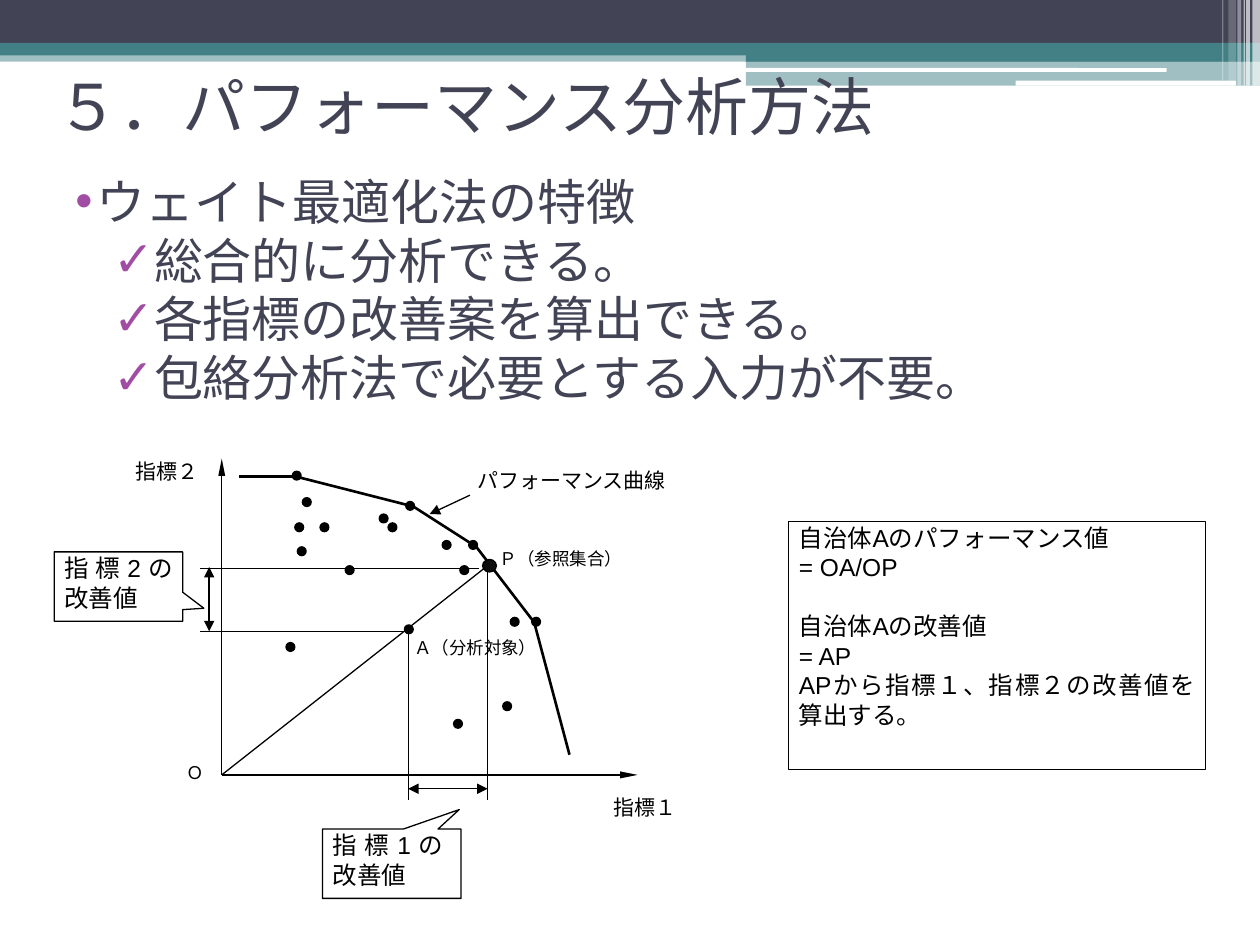
import pptx
import pptx.util
import pptx.dml.color
import pptx.oxml.ns
import pptx.enum.shapes
import pptx.enum.text
import lxml.etree

Inches, Pt = pptx.util.Inches, pptx.util.Pt
SHAPE = pptx.enum.shapes.MSO_SHAPE
ANCHOR = pptx.enum.text.MSO_ANCHOR
ALIGN = pptx.enum.text.PP_ALIGN
COLORS = {"navy": "424456", "teal": "438086", "purple": "A04DA3",
          "white": "FFFFFF", "black": "000000", "ink": "0D0D0D"}

# Content
TITLE = "５．パフォーマンス分析方法"
FEATURES = [("ウェイト最適化法の特徴", 0), ("総合的に分析できる。", 1),
            ("各指標の改善案を算出できる。", 1), ("包絡分析法で必要とする入力が不要。", 1)]
BULLETS = [("•", 0.17, 0.17), ("✓", 0.58, 0.28)]  # mark, text indent, hang
FORMULAS = ["自治体Aのパフォーマンス値", "= OA/OP", "自治体Aの改善値", "= AP",
            "APから指標１、指標２の改善値を算出する。"]
SECOND_FORMULA = 2
# Header bars: left, top, width, height, colour, opacity %
BARS = [(0, 0.4, 10, 0.09, "teal", 50), (0, 0, 10, 0.34, "navy", 100),
        (0, 0.34, 10, 0.1, "teal", 100), (5.92, 0.39, 4.08, 0.1, "teal", 100),
        (5.92, 0.48, 4.08, 0.2, "teal", 50)]
RULES = [(5.91, 0.54, 3.35, 0.03), (8.06, 0.64, 1.75, 0.04)]
STRIPES = [(9.94, 0.06, 0.68, 65), (9.89, 0.03, 0.68, 65), (9.87, 0.01, 0.68, 60),
           (9.82, 0.03, 0.68, 40), (9.75, 0.06, 0.64, 20), (9.7, 0.01, 0.64, 30)]
# Diagram
ORIGIN, REFERENCE = (1.76, 6.15), (3.87, 4.49)
AXIS_ENDS = [(1.76, 3.64), (5.06, 6.15)]
GUIDES = [((3.87, 4.51), (3.87, 6.35)), ((3.24, 4.98), (3.24, 6.35)),
          ((3.22, 5.01), (1.59, 5.01)), ((3.8, 4.51), (1.59, 4.51))]
IMPROVEMENTS = [((3.24, 6.26), (3.87, 6.26)), ((1.66, 4.5), (1.66, 5.01))]
CURVE = [(1.9, 3.78), (2.34, 3.78), (3.28, 4.02), (3.78, 4.34), (4.24, 4.94), (4.52, 5.99)]
DOT = 0.07
DOTS = [(3.22, 3.98), (2.74, 4.49), (2.34, 4.15), (3.65, 4.49), (3.08, 4.15), (3.6, 5.71),
        (3.99, 5.57), (3.72, 4.29), (2.36, 4.34), (4.22, 4.9), (3.01, 4.08), (3.51, 4.29),
        (2.4, 3.95), (2.54, 4.15), (4.05, 4.9), (2.27, 5.1), (3.21, 4.96), (2.32, 3.74)]
LABELS = [("指標２", 0.98, 3.59, 0.8, 0.34, 12, "Arial"),
          ("パフォーマンス曲線", 3.69, 3.66, 2.18, 0.43, 12, "Arial"),
          ("Ｏ", 1.38, 6, 0.49, 0.41, 10, "TeX Gyre Schola"),
          ("指標１", 4.77, 6.26, 0.81, 0.41, 12, "Arial"),
          ("Ａ（分析対象）", 3.19, 5.01, 1.26, 0.36, 10, "Arial"),
          ("Ｐ（参照集合）", 3.87, 4.3, 1.2, 0.39, 10, "Arial")]
CALLOUTS = [("指標2の改善値", 0.43, 4.38, 1.02, (0.665, 0.314)),
            ("指標1の\v改善値", 2.56, 6.58, 1.1, (0.487, -0.782))]

prs = pptx.Presentation()
prs.slide_width, prs.slide_height = Inches(10), Inches(7.5)
slide = prs.slides.add_slide(prs.slide_layouts[5])


def rgb(name):
    return pptx.dml.color.RGBColor.from_string(COLORS[name])


def sub(parent, tag, **attributes):
    return lxml.etree.SubElement(parent, pptx.oxml.ns.qn(tag), attributes)


def box(kind, left, top, width, height, fill, line=None, opacity=100):
    shape = slide.shapes.add_shape(kind, *map(Inches, (left, top, width, height)))
    shape.shadow.inherit = False
    shape.fill.solid()
    shape.fill.fore_color.rgb = rgb(fill)
    if opacity < 100:
        color = shape.fill._xPr.find(".//" + pptx.oxml.ns.qn("a:srgbClr"))
        sub(color, "a:alpha", val=str(opacity * 1000))
    if line:
        shape.line.color.rgb = rgb(line)
        shape.line.width = Pt(0.75)
    else:
        shape.line.fill.background()
    return shape


def line(start, end, width=0.75, heads=(), size="med", length="med"):
    connector = slide.shapes.add_connector(
        pptx.enum.shapes.MSO_CONNECTOR.STRAIGHT, *map(Inches, (*start, *end)))
    connector.line.color.rgb = rgb("black")
    connector.line.width = Pt(width)
    for head in heads:
        sub(connector.line._get_or_add_ln(), head, type="triangle", w=size, len=length)
    sub(connector._element.spPr, "a:effectLst")


def write(shape, paragraphs, size, font="Arial", color="black", align=ALIGN.JUSTIFY,
          anchor=ANCHOR.TOP, insets=(0.1, 0.05)):
    frame = shape.text_frame
    frame.word_wrap = True
    frame.auto_size = pptx.enum.text.MSO_AUTO_SIZE.NONE
    frame.vertical_anchor = anchor
    frame.margin_left = frame.margin_right = Inches(insets[0])
    frame.margin_top = frame.margin_bottom = Inches(insets[1])
    frame.text = "\n".join(paragraphs)
    for paragraph in frame.paragraphs:
        paragraph.alignment = align
        for run in paragraph.runs:
            run.font.size, run.font.name = Pt(size), font
            run.font.color.rgb = rgb(color)
    return frame.paragraphs


def text_box(left, top, width, height):
    return slide.shapes.add_textbox(*map(Inches, (left, top, width, height)))


# Header decoration
for *place, color, opacity in BARS:
    box(SHAPE.RECTANGLE, *place, color, opacity=opacity)
for rule in RULES:
    box(SHAPE.ROUNDED_RECTANGLE, *rule, "white")
for left, width, height, opacity in STRIPES:
    box(SHAPE.RECTANGLE, left, 0, width, height, "white", opacity=opacity)

# Title, brought in front of the header
title = slide.shapes.title
title.left, title.top, title.width, title.height = map(Inches, (0.35, 0.52, 9, 0.63))
write(title, [TITLE], 36, "Karla", "navy", ALIGN.LEFT, ANCHOR.MIDDLE)
slide.shapes._spTree.append(title._element)

# Feature list
features = write(text_box(0.5, 1.31, 9, 5.88), [text for text, level in FEATURES],
                 28, "Karla", "navy", ALIGN.LEFT)
for paragraph, (text, level) in zip(features, FEATURES):
    mark, indent, hang = BULLETS[level]
    paragraph.level = level
    properties = paragraph._p.get_or_add_pPr()
    properties.set("marL", str(Inches(indent)))
    properties.set("indent", str(-Inches(hang)))
    sub(sub(properties, "a:buClr"), "a:srgbClr", val=COLORS["purple"])
    sub(properties, "a:buFont", typeface="Arial")
    sub(properties, "a:buChar", char=mark)

# Formula panel
formulas = write(box(SHAPE.RECTANGLE, 6.26, 4.14, 3.31, 1.97, "white", "black"),
                 FORMULAS, 14, insets=(0.08, 0.01))
formulas[SECOND_FORMULA].space_before = Pt(17)

# Guides, improvement spans and axes
for start, end in GUIDES:
    line(start, end, 0.25)
for start, end in IMPROVEMENTS:
    line(start, end, heads=("a:headEnd", "a:tailEnd"))
for end in AXIS_ENDS:
    line(ORIGIN, end, heads=("a:tailEnd",), size="sm", length="lg")
line((3.73, 3.93), (3.41, 4.08), heads=("a:tailEnd",))

# Observations, performance curve and ray to the reference point
for left, top in DOTS:
    box(SHAPE.FLOWCHART_CONNECTOR, left, top, DOT, DOT, "black", "black")
for start, end in zip(CURVE, CURVE[1:]):
    line(start, end, 1.5)
line(ORIGIN, REFERENCE)

# Labels and reference point
for text, left, top, width, height, size, font in LABELS:
    write(text_box(left, top, width, height), [text], size, font)
box(SHAPE.FLOWCHART_CONNECTOR, 3.83, 4.44, 0.11, 0.1, "ink", "black")

# Callouts
for text, left, top, width, tip in CALLOUTS:
    callout = box(SHAPE.RECTANGULAR_CALLOUT, left, top, width, 0.55, "white", "black")
    callout.adjustments[0], callout.adjustments[1] = tip
    write(callout, [text], 14, insets=(0.08, 0.01))

prs.save("out.pptx")
